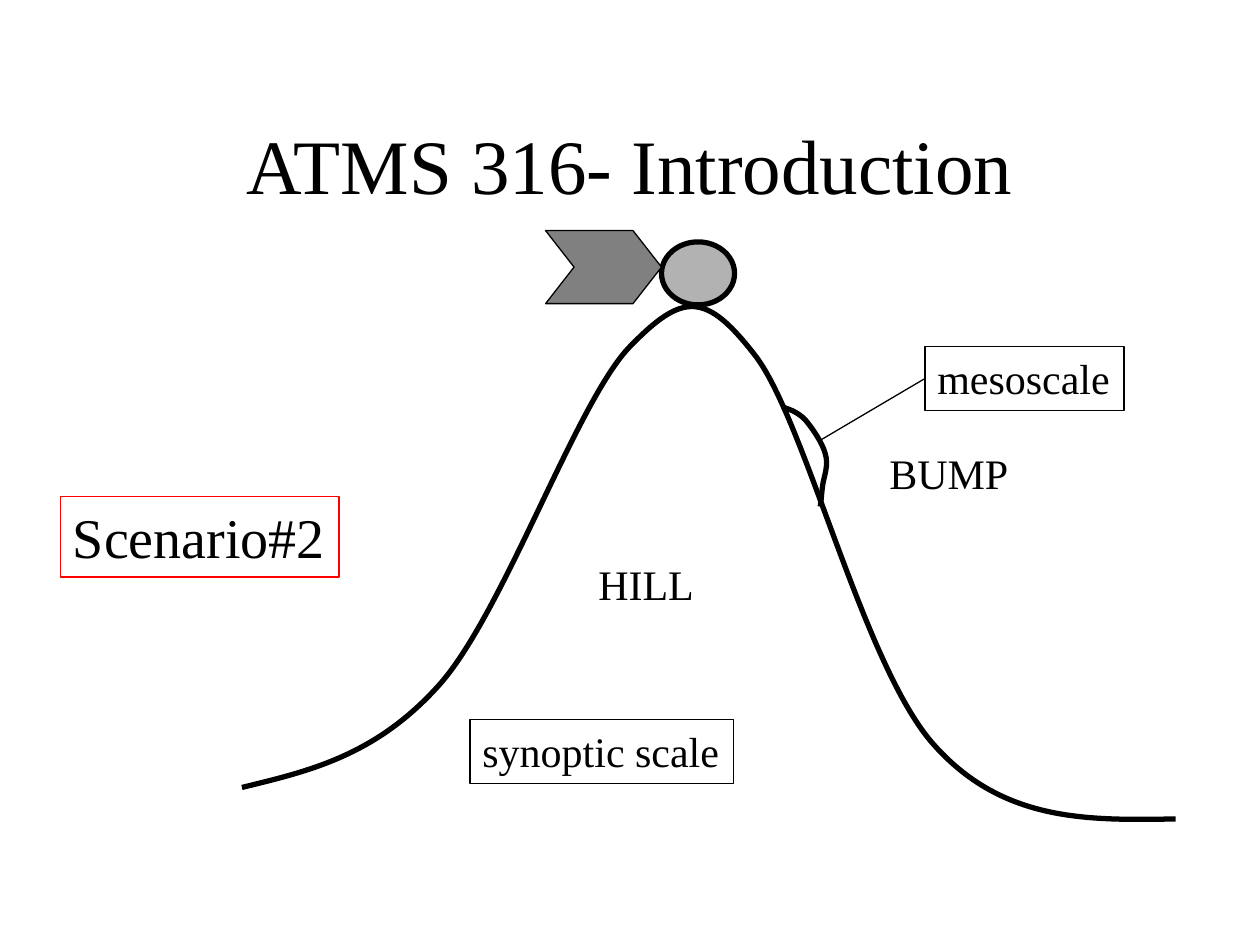
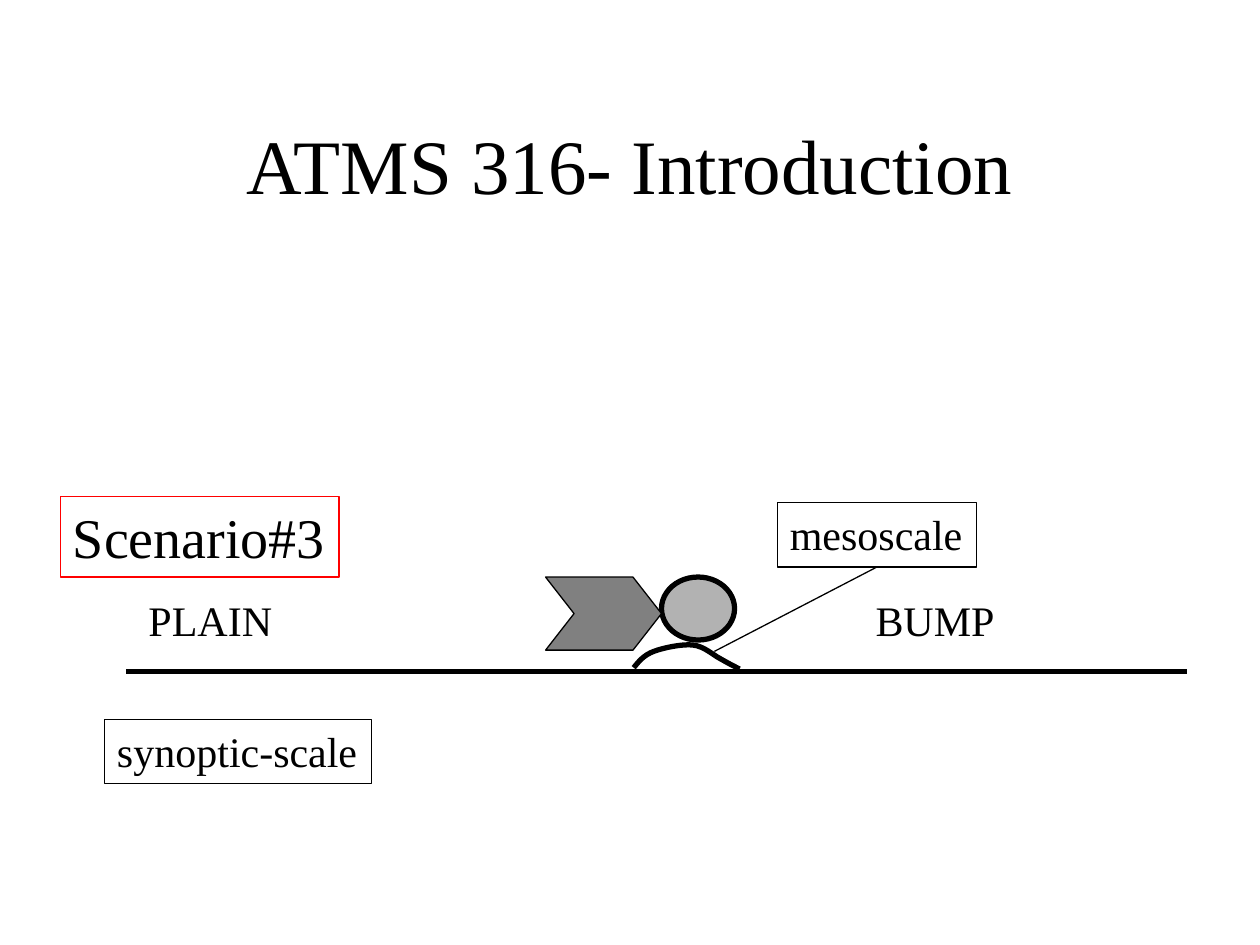
from lxml.etree import SubElement
from pptx import Presentation
from pptx.dml.color import RGBColor
from pptx.enum.shapes import MSO_CONNECTOR, MSO_SHAPE
from pptx.enum.text import MSO_ANCHOR, MSO_AUTO_SIZE, PP_ALIGN
from pptx.oxml.ns import qn
from pptx.util import Inches, Pt

COLORS = {"ink": "000000", "ball": "B2B2B2", "wind": "808080", "scenario": "FF0000"}
FONT = "Times New Roman"
TITLE = "ATMS 316- Introduction"
THIN, THICK = 0.75, 3
LEFT_SIDE, BOTTOM_SIDE = 1, 2

# Curves hold a start point, then two control points and an end point per segment.
# Labels are (text, left, top, width, height); pointers are (start, side of "mesoscale").
SCENARIOS = [
    {
        "name": "Scenario#2",
        "ball_top": 1.92,
        "wind_top": 1.83,
        "curves": [
            [(1.92, 6.25), (2.45, 6.12), (2.99, 6), (3.5, 5.42),
             (4.01, 4.83), (4.58, 3.18), (5, 2.75),
             (5.42, 2.32), (5.6, 2.31), (6, 2.83),
             (6.4, 3.36), (6.86, 5.31), (7.42, 5.92),
             (7.97, 6.53), (8.65, 6.51), (9.33, 6.5)],
            [(6.21, 3.23), (6.27, 3.25), (6.33, 3.27), (6.39, 3.33),
             (6.45, 3.4), (6.53, 3.52), (6.55, 3.6),
             (6.58, 3.69), (6.54, 3.78), (6.53, 3.85),
             (6.52, 3.92), (6.52, 3.97), (6.51, 4.02)],
        ],
        "ground": None,
        "boxed": [("synoptic scale", 3.73, 5.71, 2.09, 0.51),
                  ("mesoscale", 7.34, 2.75, 1.58, 0.51)],
        "plain": [("HILL", 4.65, 4.38, 0.96, 0.5), ("BUMP", 6.96, 3.5, 1.15, 0.5)],
        "pointer": ((6.5, 3.5), LEFT_SIDE),
    },
    {
        "name": "Scenario#3",
        "ball_top": 4.58,
        "wind_top": 4.58,
        "curves": [
            [(5.03, 5.3), (5.07, 5.25), (5.11, 5.2), (5.19, 5.17),
             (5.27, 5.14), (5.42, 5.11), (5.5, 5.12),
             (5.59, 5.13), (5.66, 5.2), (5.72, 5.23),
             (5.79, 5.27), (5.83, 5.29), (5.87, 5.31)],
        ],
        "ground": ((1, 5.33), (9.42, 5.33)),
        "boxed": [("synoptic-scale", 0.83, 5.71, 2.12, 0.51),
                  ("mesoscale", 6.17, 3.99, 1.58, 0.51)],
        "plain": [("PLAIN", 1.08, 4.67, 1.18, 0.5), ("BUMP", 6.85, 4.67, 1.15, 0.5)],
        "pointer": ((5.67, 5.17), BOTTOM_SIDE),
    },
]


def color(name):
    return RGBColor.from_string(COLORS[name])


def set_line(shape, width, name="ink"):
    shape.line.color.rgb = color(name)
    shape.line.width = Pt(width)


def add_title(slide):
    box = slide.shapes.add_textbox(Inches(0.75), Inches(0.67), Inches(8.5), Inches(1.25))
    frame = box.text_frame
    frame.word_wrap = True
    frame.vertical_anchor = MSO_ANCHOR.MIDDLE
    frame.text = TITLE
    frame.paragraphs[0].alignment = PP_ALIGN.CENTER
    set_font(frame, 44)


def set_font(frame, size):
    font = frame.paragraphs[0].runs[0].font
    font.name = FONT
    font.size = Pt(size)
    font.color.rgb = color("ink")


def add_label(slide, label, size=24, border=None):
    text, *place = label
    box = slide.shapes.add_textbox(*map(Inches, place))
    frame = box.text_frame
    frame.word_wrap = False
    frame.auto_size = MSO_AUTO_SIZE.SHAPE_TO_FIT_TEXT
    frame.text = text
    set_font(frame, size)
    if border:
        set_line(box, THIN, border)
    return box


def add_solid(slide, kind, left, top, width, height, fill, line_width):
    shape = slide.shapes.add_shape(kind, *map(Inches, (left, top, width, height)))
    shape.shadow.inherit = False
    shape.fill.solid()
    shape.fill.fore_color.rgb = color(fill)
    set_line(shape, line_width)
    return shape


def add_curve(slide, points):
    """Draw a polygon through all points, then turn each three lines into one Bezier."""
    start, *rest = [(Inches(x), Inches(y)) for x, y in points]
    builder = slide.shapes.build_freeform(*start)
    builder.add_line_segments(rest, close=False)
    shape = builder.convert_to_shape()
    shape.shadow.inherit = False
    shape.fill.background()
    set_line(shape, THICK)
    lines = list(shape._element.iter(qn("a:lnTo")))
    outline = lines[0].getparent()
    for first in range(0, len(lines), 3):
        bezier = SubElement(outline, qn("a:cubicBezTo"))
        for line in lines[first:first + 3]:
            bezier.extend(list(line))
            outline.remove(line)


def add_line(slide, start, end, width):
    line = slide.shapes.add_connector(
        MSO_CONNECTOR.STRAIGHT, *map(Inches, (*start, *end)))
    set_line(line, width)
    SubElement(line._element.spPr, qn("a:effectLst"))
    return line


def add_scenario(presentation, scenario):
    slide = presentation.slides.add_slide(presentation.slide_layouts[6])
    add_title(slide)
    for points in scenario["curves"]:
        add_curve(slide, points)
    add_solid(slide, MSO_SHAPE.OVAL, 5.25, scenario["ball_top"], 0.58, 0.5, "ball", THICK)
    wind = add_solid(slide, MSO_SHAPE.CHEVRON, 4.33, scenario["wind_top"], 0.92, 0.58,
                     "wind", THIN)
    wind.adjustments[0] = 0.39
    if scenario["ground"]:
        add_line(slide, *scenario["ground"], THICK)

    boxes = {label[0]: add_label(slide, label, border="ink") for label in scenario["boxed"]}
    start, side = scenario["pointer"]
    pointer = add_line(slide, start, start, THIN)
    pointer.end_connect(boxes["mesoscale"], side)
    for label in scenario["plain"]:
        add_label(slide, label)
    add_label(slide, (scenario["name"], 0.48, 3.94, 2.21, 0.64), 32, "scenario")


def main():
    presentation = Presentation()
    presentation.slide_width = Inches(10)
    presentation.slide_height = Inches(7.5)
    for scenario in SCENARIOS:
        add_scenario(presentation, scenario)
    presentation.save("out.pptx")


if __name__ == "__main__":
    main()
